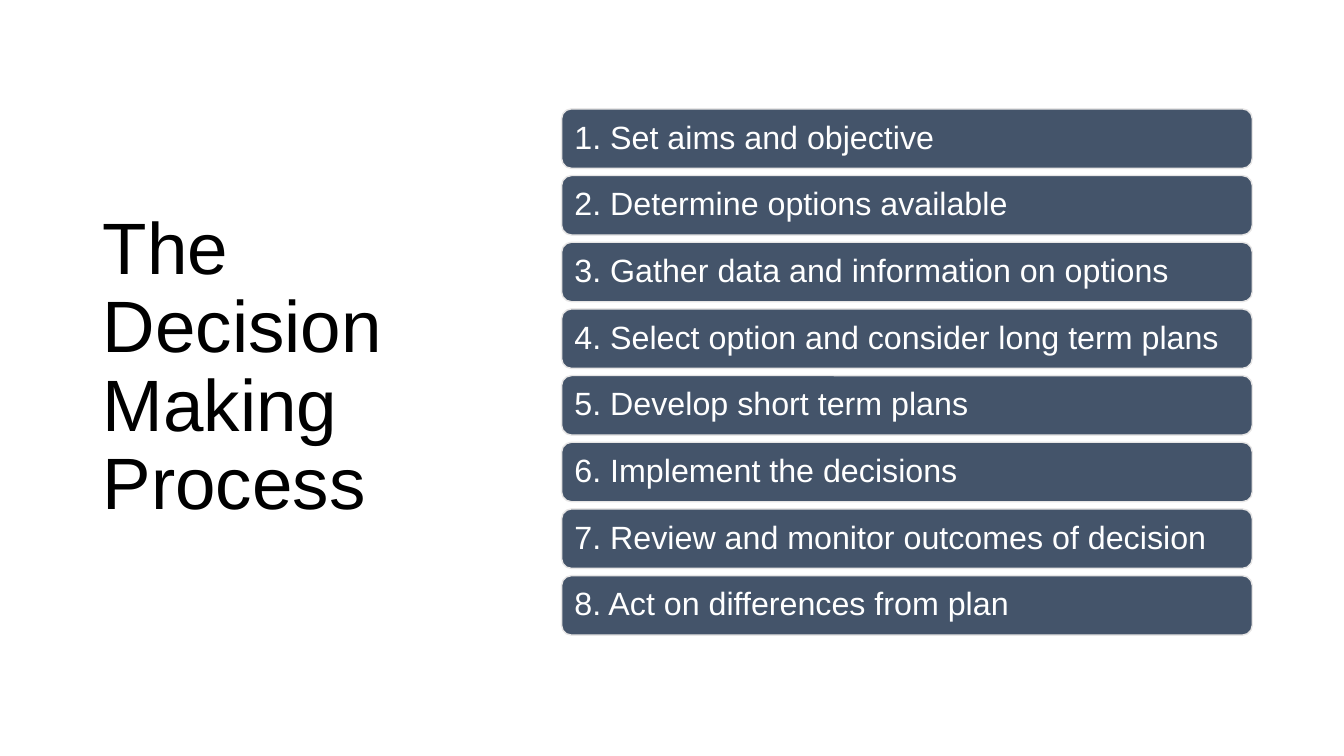
from dataclasses import dataclass

from pptx import Presentation, util as u
from pptx.dml.color import RGBColor
from pptx.enum import shapes, text


@dataclass(frozen=True)
class Theme:
    font: str = "Arial"
    ink: str = "000000"
    bar: str = "44546A"
    edge: str = "E7E6E6"
    label: str = "FFFFFF"
    head: int = 52
    body: int = 23
    lead: float = 0.9


class Deck:
    def __init__(self, theme, wide=13.33, high=7.5):
        self.theme = theme
        self.show = Presentation()
        self.show.slide_width = u.Inches(wide)
        self.show.slide_height = u.Inches(high)
        self.slide = self.show.slides.add_slide(self.show.slide_layouts[5])

    def box(self, left, top, width, height):
        """Turn percentages of the slide into lengths."""
        wide, high = self.show.slide_width, self.show.slide_height
        return [int(share * side / 100) for share, side in
                zip((left, top, width, height), (wide, high, wide, high))]

    def label(self, shape, words, size, color):
        frame = shape.text_frame
        frame.text = words
        frame.word_wrap = True
        frame.auto_size = text.MSO_AUTO_SIZE.NONE
        frame.vertical_anchor = text.MSO_ANCHOR.MIDDLE
        para = frame.paragraphs[0]
        para.alignment = text.PP_ALIGN.LEFT
        para.line_spacing = self.theme.lead
        para.font.name = self.theme.font
        para.font.size = u.Pt(size)
        para.font.color.rgb = RGBColor.from_string(color)
        return frame

    def title(self, words, *area):
        head = self.slide.shapes.title
        head.left, head.top, head.width, head.height = self.box(*area)
        self.label(head, words, self.theme.head, self.theme.ink)

    def bar(self, words, *area):
        bar = self.slide.shapes.add_shape(
            shapes.MSO_SHAPE.ROUNDED_RECTANGLE, *self.box(*area))
        bar.shadow.inherit = False
        bar.fill.solid()
        bar.fill.fore_color.rgb = RGBColor.from_string(self.theme.bar)
        bar.line.color.rgb = RGBColor.from_string(self.theme.edge)
        bar.line.width = u.Pt(1)
        frame = self.label(bar, words, self.theme.body, self.theme.label)
        frame.margin_left = frame.margin_right = u.Inches(0.1)
        frame.margin_top = frame.margin_bottom = u.Inches(0.1)

    def stack(self, items, left, top, width, height, pitch):
        """Number the items and set them in bars at an equal pitch."""
        for row, item in enumerate(items):
            self.bar(f"{row + 1}. {item}",
                     left, top + row * pitch, width, height)


STEPS = (
    "Set aims and objective",
    "Determine options available",
    "Gather data and information on options",
    "Select option and consider long term plans",
    "Develop short term plans",
    "Implement the decisions",
    "Review and monitor outcomes of decision",
    "Act on differences from plan",
)


def main():
    deck = Deck(Theme())
    deck.title("The Decision Making Process", 6.9, 8.13, 27.68, 81.2)
    deck.stack(STEPS, left=41.79, top=14.4, width=51.39, height=7.87,
               pitch=8.82)
    deck.show.save("out.pptx")


if __name__ == "__main__":
    main()
